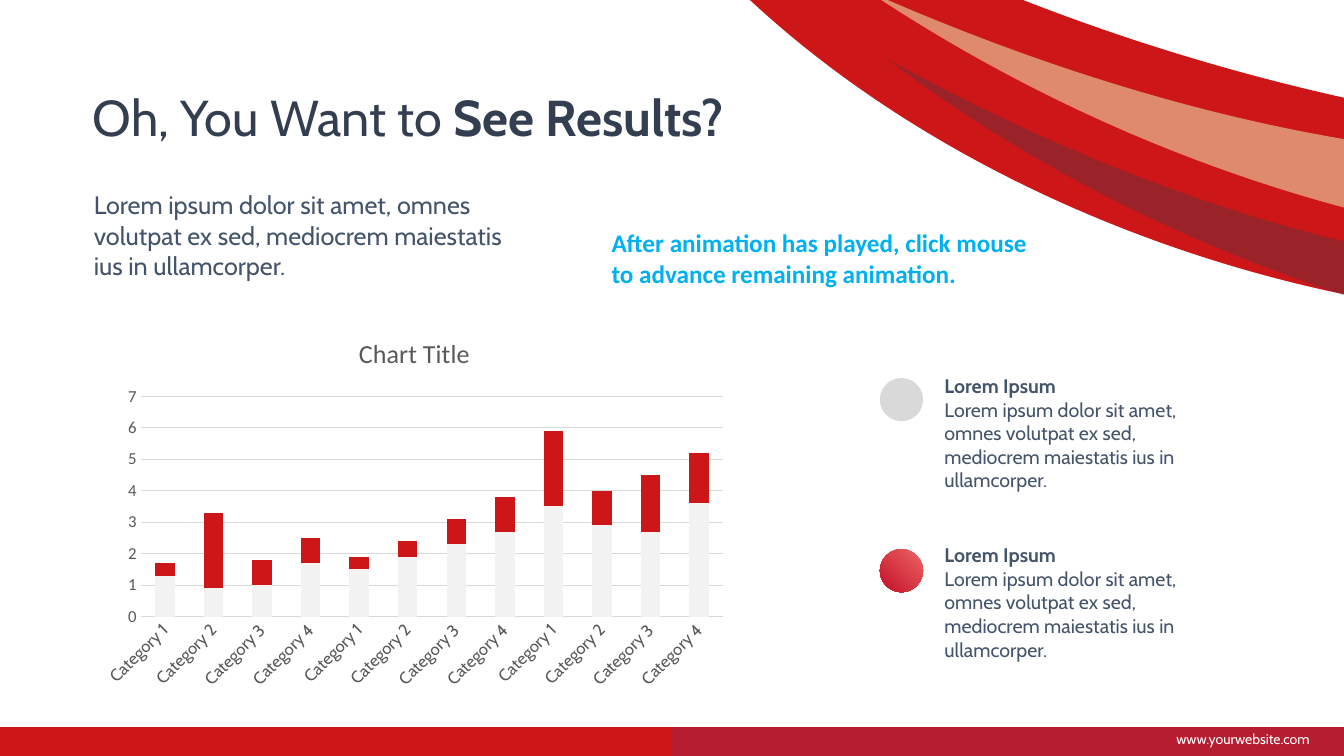
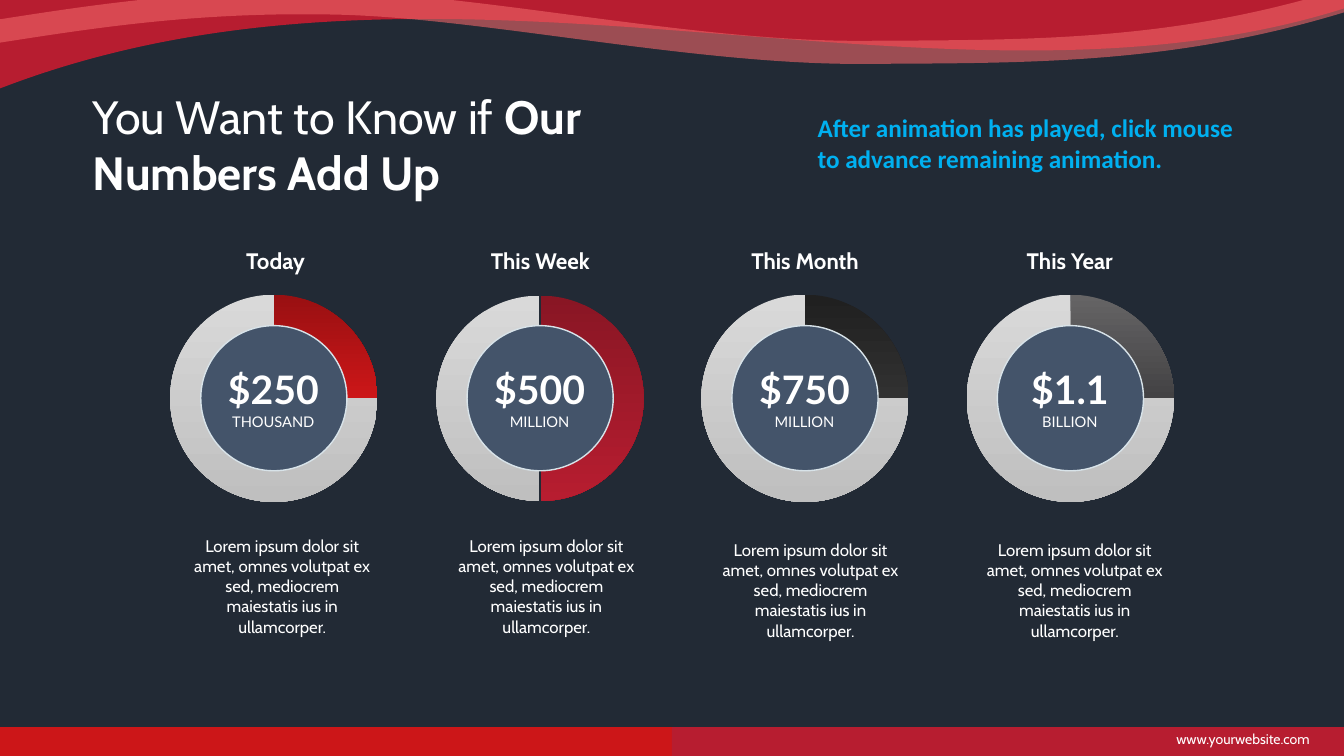
from lxml import etree
from pptx import Presentation
from pptx.chart.data import CategoryChartData
from pptx.dml.color import RGBColor
from pptx.enum import chart as ch, shapes, text
from pptx.oxml import parse_xml
from pptx.oxml.ns import nsdecls, qn
from pptx.util import Pt

RED, CRIMSON, CORAL = "CC1618", "B71D30", "EE6567"
NAVY, SLATE, INK, WHITE = "222A35", "44546A", "333F50", "FFFFFF"
SKY, SILVER, GREY = "00B0F0", "D9D9D9", "595959"
LOREM = ("Lorem ipsum dolor sit amet, omnes volutpat ex sed, "
         "mediocrem maiestatis ius in ullamcorper.")
LEFT, CENTER, RIGHT = text.PP_ALIGN.LEFT, text.PP_ALIGN.CENTER, text.PP_ALIGN.RIGHT
TOP, MIDDLE = text.MSO_ANCHOR.TOP, text.MSO_ANCHOR.MIDDLE
OVAL, RECT = shapes.MSO_SHAPE.OVAL, shapes.MSO_SHAPE.RECTANGLE
W, H = 960, 540


def paint(fill, *colors, angle=270):
    """Fill with one hex colour, or with a gradient between two."""
    if len(colors) == 1:
        fill.solid()
        fill.fore_color.rgb = RGBColor.from_string(colors[0])
        return
    fill.gradient()
    fill.gradient_angle = angle
    for stop, color in zip(fill.gradient_stops, colors):
        stop.color.rgb = RGBColor.from_string(color)


def write(sp, box, rows, size, color, font="Cabin", align=LEFT, anchor=TOP):
    """Place sp at box and fill it; each row is a list of (text, bold)."""
    sp.left, sp.top, sp.width, sp.height = map(Pt, box)
    tf = sp.text_frame
    tf.word_wrap = True
    tf.auto_size = text.MSO_AUTO_SIZE.NONE
    tf.vertical_anchor = anchor
    tf.margin_left = tf.margin_top = tf.margin_right = tf.margin_bottom = 0
    for i, row in enumerate(rows):
        p = tf.add_paragraph() if i else tf.paragraphs[0]
        p.alignment = align
        for words, bold in row:
            r = p.add_run()
            r.text = words
            r.font.name, r.font.size, r.font.bold = font, Pt(size), bold
            paint(r.font.fill, color)
    return tf


prs = Presentation()
prs.slide_width, prs.slide_height = Pt(W), Pt(H)
title_only = prs.slide_layouts[5]
results = prs.slides.add_slide(title_only)
numbers = prs.slides.add_slide(title_only)

# Dark backdrop of the numbers slide, moved behind the title
sp = numbers.shapes.add_shape(RECT, 0, 0, Pt(W), Pt(H))
sp.shadow.inherit = False
paint(sp.fill, NAVY)
sp.line.fill.background()
numbers.shapes.title.element.addprevious(sp.element)

# Ribbons: a start point, then lines (one point) and Bézier curves (three points)
ribbons = [
    (results, RED, 100, None, (535.7, 0), [
        [(730.8, 0)], [(800.6, 27.4), (879.1, 51.8), (960, 69.8)],
        [(960, 210.2)], [(804.2, 177.8), (648.7, 105.1), (535.7, 0)]]),
    (results, "ECD6A7", 60, None, (620.6, -5.8), [
        [(745.2, 49), (858.2, 82.1), (960, 99.4)],
        [(960, 148.3)], [(850.3, 118.8), (734.4, 69.8), (620.6, -5.8)]]),
    (results, INK, 32, None, (634.3, 42.5), [
        [(758.9, 110.9), (871.2, 151.9), (970.6, 175)],
        [(972, 214.6)], [(862.6, 180), (744.5, 126), (634.3, 42.5)]]),
    (numbers, CRIMSON, 100, None, (-33.1, -7.2), [
        [(283.7, -148.3), (717.1, 86.4), (1025.3, -56.2)],
        [(1026.7, -20.2)], [(716.4, 128.2), (321.1, -82.8), (-33.1, 77)]]),
    (numbers, CORAL, 60, 16.5, (-15.1, 24.5), [
        [(59, 13), (134.6, 0), (239.8, 2.2)],
        [(344.9, 4.3), (495.4, 38.2), (617, 37.4)],
        [(738, 36.7), (841, 38.2), (967.7, -2.2)]]),
]
for s, color, alpha, stroke, start, segments in ribbons:
    # 127 EMU is a hundredth of a point
    anchors = [(x * 100, y * 100) for x, y in [start] + [seg[-1] for seg in segments]]
    x0, y0 = (min(values) for values in zip(*anchors))
    fb = s.shapes.build_freeform(*anchors[0], scale=127)
    fb.add_line_segments(anchors[1:], close=stroke is None)
    sp = fb.convert_to_shape()
    # Bend the straight segments that have control points
    for line, seg in zip(sp.element.findall(".//" + qn("a:lnTo")), segments):
        if len(seg) == 3:
            line.tag = qn("a:cubicBezTo")
            for n, (x, y) in enumerate(seg[:2]):
                pt = etree.Element(qn("a:pt"), x=str(round(x * 100 - x0)),
                                   y=str(round(y * 100 - y0)))
                line.insert(n, pt)
    sp.shadow.inherit = False
    if stroke is None:
        paint(sp.fill, color)
        sp.line.fill.background()
    else:
        sp.fill.background()
        paint(sp.line.fill, color)
        sp.line.width = Pt(stroke)
    if alpha < 100:
        clr = sp.element.spPr.find(".//" + qn("a:srgbClr"))
        etree.SubElement(clr, qn("a:alpha")).set("val", str(alpha * 1000))

# Title, animation note and footer on both slides
frames = [
    (results, (66.2, 61.2, 549.4, 43.9), 36, INK, MIDDLE,
     "Oh, You Want to ", "See Results?", (436.8, 162.7)),
    (numbers, (66.2, 62.6, 351.4, 94.3), 33.3, WHITE, TOP,
     "You Want to Know if ", "Our Numbers Add Up", (584, 80.6)),
]
for s, box, size, color, anchor, plain, strong, note in frames:
    write(s.shapes.title, box, [[(plain, False), (strong, True)]], size, color,
          anchor=anchor)
    for left, color in ((0, RED), (W / 2, CRIMSON)):
        sp = s.shapes.add_shape(RECT, Pt(left), Pt(519.4), Pt(W - left), Pt(H - 519.4))
        sp.shadow.inherit = False
        paint(sp.fill, color)
        sp.line.fill.background()
    write(s.shapes.add_textbox(0, 0, 0, 0), (790, 522, 145.4, 12.4),
          [[("www.yourwebsite.com", False)]], 10, WHITE, align=RIGHT)
    write(s.shapes.add_textbox(0, 0, 0, 0), (*note, 306, 44),
          [[("After animation has played, click mouse to advance remaining animation.",
             True)]], 18, SKY, font="Calibri")

# Results slide: intro, stacked columns and legend
write(results.shapes.add_textbox(0, 0, 0, 0), (67, 135.4, 311.8, 65.5),
      [[(LOREM, False)]], 18, SLATE)

data = CategoryChartData()
data.categories = [f"Category {n}" for n in (1, 2, 3, 4)] * 3
data.add_series("Series 1", (1.3, 0.9, 1, 1.7, 1.5, 1.9, 2.3, 2.7, 3.5, 2.9, 2.7, 3.6))
data.add_series("Series 2", (0.4, 2.4, 0.8, 0.8, 0.4, 0.5, 0.8, 1.1, 2.4, 1.1, 1.8, 1.6))
chart = results.shapes.add_chart(ch.XL_CHART_TYPE.COLUMN_STACKED, Pt(66.2), Pt(226.8),
                                 Pt(459.7), Pt(271), data).chart
chart.has_legend = False
chart.font.name, chart.font.size = "Calibri", Pt(10)
chart.has_title = True
chart.chart_title.include_in_layout = False
tf = chart.chart_title.text_frame
tf.text = "Chart Title"
font = tf.paragraphs[0].runs[0].font
font.name, font.size, font.bold = "Calibri", Pt(18.6), False
paint(font.fill, GREY)

for axis, name in ((chart.category_axis, "Cabin"), (chart.value_axis, "Calibri")):
    axis.major_tick_mark = axis.minor_tick_mark = ch.XL_TICK_MARK.NONE
    font = axis.tick_labels.font
    font.name, font.size = name, Pt(12)
    paint(font.fill, GREY)
chart.element.xpath(".//c:catAx/c:txPr/a:bodyPr")[0].set("rot", "-2700000")
axis = chart.value_axis
axis.minimum_scale, axis.maximum_scale, axis.major_unit = 0, 7, 1
axis.format.line.fill.background()
for line in (chart.category_axis.format.line, axis.major_gridlines.format.line):
    paint(line.fill, SILVER)
    line.width = Pt(0.75)

plot = chart.plots[0]
plot.vary_by_categories = False
plot.gap_width, plot.overlap = 150, 100
for series, color in zip(plot.series, ("F2F2F2", RED)):
    paint(series.format.fill, color)

for dot_top, top, colors in ((270, 267.1, [SILVER]), (392.2, 388.1, [CORAL, "C31127"])):
    sp = results.shapes.add_shape(OVAL, Pt(628.5), Pt(dot_top), Pt(30.9), Pt(30.9))
    sp.shadow.inherit = False
    paint(sp.fill, *colors, angle=225)
    sp.line.fill.background()
    write(results.shapes.add_textbox(0, 0, 0, 0), (674.6, top, 195.8, 85),
          [[("Lorem Ipsum", True)], [(LOREM, False)]], 14, SLATE)

# Numbers slide: four rings, each a pie under a disc
rings = [
    (120.8, "Today", "$250", "THOUSAND", (25, 75), ("991012", RED), 374),
    (311, "This Week", "$500", "MILLION", (50, 50, 0), ("891624", CRIMSON), 374),
    (500.2, "This Month", "$750", "MILLION", (25, 75), ("202020", "313131"), 376.8),
    (689.8, "This Year", "$1.1", "BILLION", (25, 75), ("656465", "434244"), 376.8),
]
for i, (left, period, amount, unit, values, colors, body_top) in enumerate(rings):
    data = CategoryChartData()
    data.categories = [str(n + 1) for n in range(len(values))]
    data.add_series("Series 1", values)
    chart = numbers.shapes.add_chart(ch.XL_CHART_TYPE.PIE, Pt(left), Pt(185.1),
                                     Pt(149.6), Pt(199.3), data).chart
    chart.has_legend = chart.has_title = False
    chart.font.name, chart.font.size = "Calibri", Pt(10)
    plot = chart.plots[0]
    plot.vary_by_categories = False
    series = plot.series[0]
    for n, pair in enumerate((colors, (SILVER, "BFBFBF"))):
        fmt = series.points[n].format
        paint(fmt.fill, *pair)
        fmt.line.fill.background()
    if values[0] == values[1]:
        chart.element.xpath(".//c:ser/c:dPt")[0].addprevious(
            parse_xml(f'<c:explosion {nsdecls("c")} val="1"/>'))
    area = chart.element.xpath(".//c:plotArea")[0]
    for old in area.findall(qn("c:layout")):
        area.remove(old)
    area.insert(0, parse_xml(
        f'<c:layout {nsdecls("c")}><c:manualLayout><c:layoutTarget val="inner"/>'
        '<c:xMode val="edge"/><c:yMode val="edge"/><c:x val="0.005"/><c:y val="0.005"/>'
        '<c:w val="0.99"/><c:h val="0.988"/></c:manualLayout></c:layout>'))

    sp = numbers.shapes.add_shape(OVAL, Pt(left + 22.6), Pt(232.6), Pt(104.4), Pt(103.7))
    sp.shadow.inherit = False
    paint(sp.fill, SLATE)
    paint(sp.line.fill, "D8E3E9")
    sp.line.width = Pt(1)

    tf = write(numbers.shapes.add_textbox(0, 0, 0, 0), (left + 29.4, 250.5, 90, 67.7),
               [[(amount, True)], [(unit, False)]], 28, WHITE, "Lato", CENTER, MIDDLE)
    tf.paragraphs[1].runs[0].font.size = Pt(10.5)
    write(numbers.shapes.add_textbox(0, 0, 0, 0), (140.4 + 189.1 * i, 173.5, 113, 25.2),
          [[(period, True)]], 16, WHITE, align=CENTER, anchor=MIDDLE)
    write(numbers.shapes.add_textbox(0, 0, 0, 0),
          (134.7 + 188.7 * i, body_top, 133.9, 89.3),
          [[(LOREM, False)]], 12, WHITE, align=CENTER, anchor=MIDDLE)

prs.save("out.pptx")
